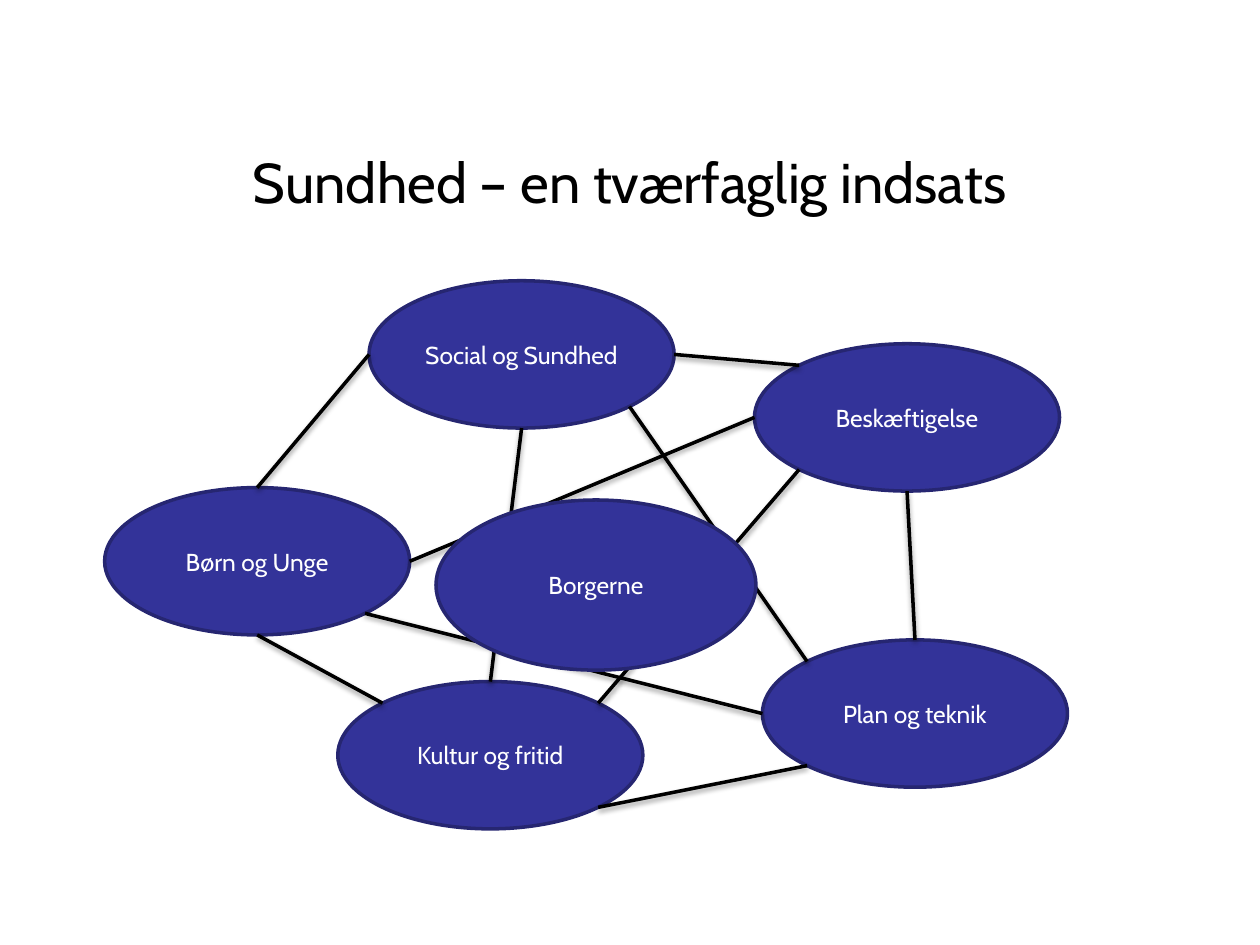
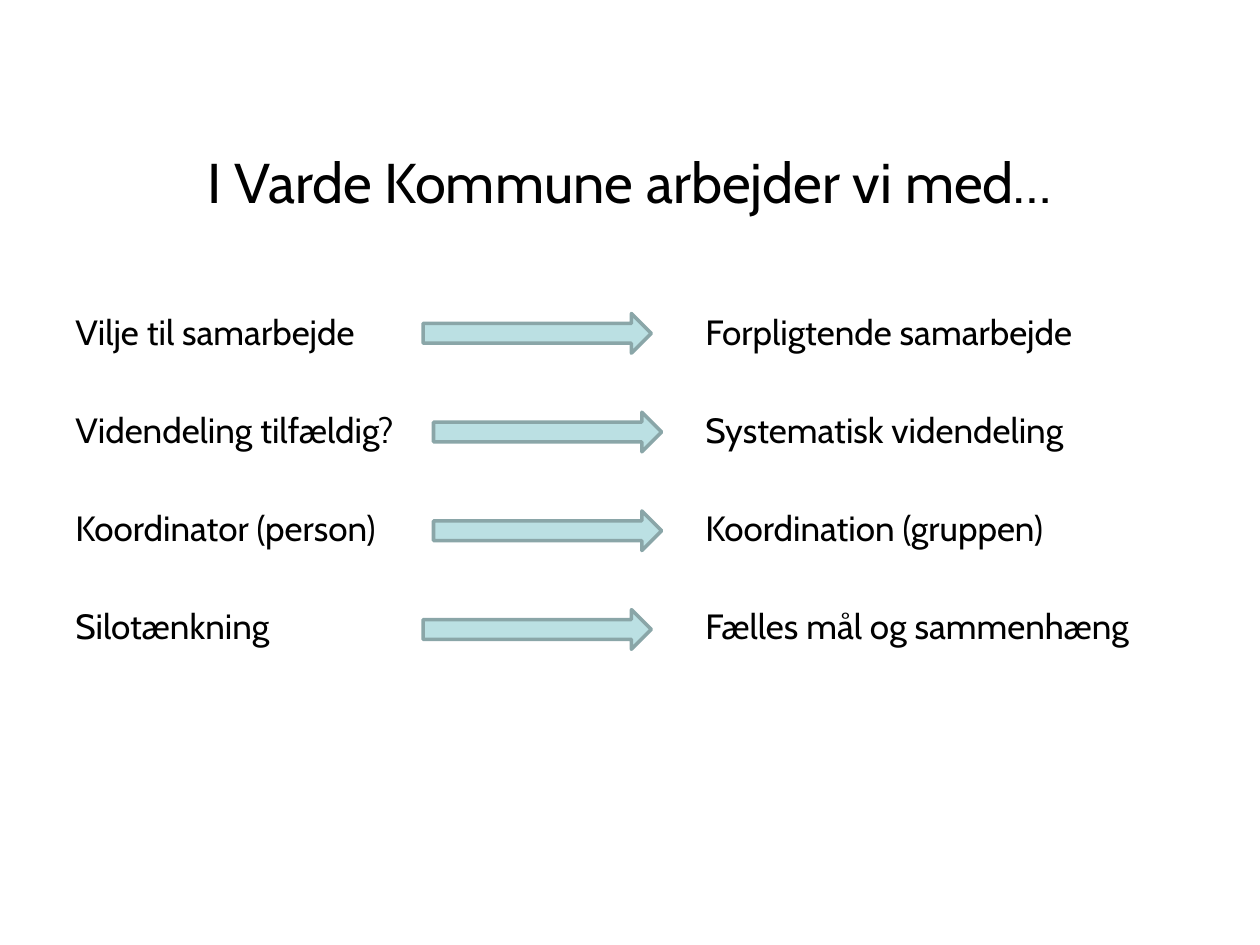
from math import cos, radians, sin

from lxml.etree import SubElement
from pptx import Presentation
from pptx.dml.color import RGBColor
from pptx.enum.shapes import MSO_CONNECTOR, MSO_SHAPE
from pptx.enum.text import MSO_ANCHOR, MSO_AUTO_SIZE, PP_ALIGN
from pptx.oxml.ns import qn
from pptx.util import Cm, Pt

FONT = "Cabin"
BLACK, WHITE = "000000", "FFFFFF"
NAVY, NAVY_EDGE = "333399", "262671"
AQUA, AQUA_EDGE = "BBE0E3", "8AA6A8"
LINE_WIDTH = Pt(2)

TITLE_BOX = (1.27, 2.64, 22.86, 2.01)
NETWORK_BOX = (2.11, 5.66, 19.41, 11.05)
SHIFTS_BOX = (1.52, 6.25, 22.36, 8)

# Department centres are offsets of the ellipse's corner within the network box.
DEPARTMENT_SIZE = (6.15, 2.97)
DEPARTMENTS = {
    "Børn og Unge": (0, 4.17),
    "Beskæftigelse": (13.1, 1.27),
    "Social og Sundhed": (5.33, 0),
    "Plan og teknik": (13.26, 7.24),
    "Kultur og fritid": (4.7, 8.08),
}
CITIZENS_OFFSET, CITIZENS_SIZE = (6.68, 4.42), (6.45, 3.43)

# Angles on the ellipse, clockwise from its right end
RIGHT, LOWER_RIGHT, BOTTOM, LOWER_LEFT = 0, 45, 90, 135
LEFT, UPPER_LEFT, TOP, UPPER_RIGHT = 180, 225, 270, 315
TIES = [
    ("Social og Sundhed", RIGHT, "Beskæftigelse", UPPER_LEFT),
    ("Social og Sundhed", LEFT, "Børn og Unge", TOP),
    ("Social og Sundhed", BOTTOM, "Kultur og fritid", TOP),
    ("Børn og Unge", BOTTOM, "Kultur og fritid", UPPER_LEFT),
    ("Beskæftigelse", BOTTOM, "Plan og teknik", TOP),
    ("Kultur og fritid", LOWER_RIGHT, "Plan og teknik", LOWER_LEFT),
    ("Kultur og fritid", UPPER_RIGHT, "Beskæftigelse", LOWER_LEFT),
    ("Børn og Unge", RIGHT, "Beskæftigelse", LEFT),
    ("Børn og Unge", LOWER_RIGHT, "Plan og teknik", LEFT),
    ("Social og Sundhed", LOWER_RIGHT, "Plan og teknik", UPPER_LEFT),
]

# From, to, and the left edge of the arrow within the box
SHIFTS = [
    ("Vilje til samarbejde", "Forpligtende samarbejde", 7.01),
    ("Videndeling tilfældig?", "Systematisk videndeling", 7.22),
    ("Koordinator (person)", "Koordination (gruppen)", 7.22),
    ("Silotænkning", "Fælles mål og sammenhæng", 7.01),
]
SHIFT_PITCH = 1.99
TARGET_COLUMN = 12.7


def rgb(hex_colour):
    return RGBColor.from_string(hex_colour)


def add_run(paragraph, text, size, colour):
    run = paragraph.add_run()
    run.text = text
    run.font.name = FONT
    run.font.size = Pt(size)
    run.font.color.rgb = rgb(colour)


def clear_insets(frame):
    frame.margin_left = frame.margin_right = 0
    frame.margin_top = frame.margin_bottom = 0


def add_titled_slide(deck, text):
    slide = deck.slides.add_slide(deck.slide_layouts[5])
    title = slide.shapes.title
    title.left, title.top, title.width, title.height = map(Cm, TITLE_BOX)
    frame = title.text_frame
    frame.auto_size = MSO_AUTO_SIZE.NONE
    frame.vertical_anchor = MSO_ANCHOR.MIDDLE
    paragraph = frame.paragraphs[0]
    paragraph.alignment = PP_ALIGN.CENTER
    add_run(paragraph, text, 32, BLACK)
    return slide


def add_outlined(shapes, kind, box, fill, edge):
    shape = shapes.add_shape(kind, *map(Cm, box))
    shape.shadow.inherit = False
    shape.fill.solid()
    shape.fill.fore_color.rgb = rgb(fill)
    shape.line.color.rgb = rgb(edge)
    shape.line.width = LINE_WIDTH
    return shape


def add_ellipse(shapes, text, box):
    ellipse = add_outlined(shapes, MSO_SHAPE.OVAL, box, NAVY, NAVY_EDGE)
    frame = ellipse.text_frame
    frame.word_wrap = True
    frame.vertical_anchor = MSO_ANCHOR.MIDDLE
    clear_insets(frame)
    paragraph = frame.paragraphs[0]
    paragraph.alignment = PP_ALIGN.CENTER
    add_run(paragraph, text, 14, WHITE)


def add_soft_shadow(connector):
    effects = SubElement(connector._element.spPr, qn("a:effectLst"))
    shadow = SubElement(effects, qn("a:outerShdw"), blurRad=str(Pt(3.1)),
                        dist=str(Pt(1.6)), dir="5400000", rotWithShape="0")
    colour = SubElement(shadow, qn("a:srgbClr"), val=BLACK)
    SubElement(colour, qn("a:alpha"), val="38000")


def rim_point(box, angle):
    """Return the point of the ellipse inside box at the given angle."""
    left, top, width, height = box
    turn = radians(angle)
    return (Cm(left + width / 2 * (1 + cos(turn))),
            Cm(top + height / 2 * (1 + sin(turn))))


def add_tie(shapes, start, end):
    tie = shapes.add_connector(MSO_CONNECTOR.STRAIGHT, *start, *end)
    tie.line.color.rgb = rgb(BLACK)
    tie.line.width = LINE_WIDTH
    add_soft_shadow(tie)


def add_network(slide, box):
    left, top = box[:2]
    shapes = slide.shapes.add_group_shape().shapes
    places = {name: (left + dx, top + dy, *DEPARTMENT_SIZE)
              for name, (dx, dy) in DEPARTMENTS.items()}
    for name, place in places.items():
        add_ellipse(shapes, name, place)
    for source, source_angle, target, target_angle in TIES:
        add_tie(shapes, rim_point(places[source], source_angle),
                rim_point(places[target], target_angle))
    dx, dy = CITIZENS_OFFSET
    add_ellipse(shapes, "Borgerne", (left + dx, top + dy, *CITIZENS_SIZE))


def add_shifts(slide, box):
    left, top = box[:2]
    frame = slide.shapes.add_textbox(*map(Cm, box)).text_frame
    frame.word_wrap = True
    clear_insets(frame)
    for row, (before, after, arrow_left) in enumerate(SHIFTS):
        paragraph = frame.add_paragraph() if row else frame.paragraphs[0]
        if row:
            paragraph.space_before = Pt(32)
        tabs = SubElement(paragraph._p.get_or_add_pPr(), qn("a:tabLst"))
        SubElement(tabs, qn("a:tab"), pos=str(Cm(TARGET_COLUMN)), algn="l")
        add_run(paragraph, f"{before}\t{after}", 20, BLACK)
        arrow_box = (left + arrow_left, top + 0.07 + row * SHIFT_PITCH, 4.6, 0.8)
        add_outlined(slide.shapes, MSO_SHAPE.RIGHT_ARROW, arrow_box, AQUA, AQUA_EDGE)


def main():
    deck = Presentation()
    deck.slide_width, deck.slide_height = Cm(25.4), Cm(19.05)
    add_network(add_titled_slide(deck, "Sundhed – en tværfaglig indsats"), NETWORK_BOX)
    add_shifts(add_titled_slide(deck, "I Varde Kommune arbejder vi med…"), SHIFTS_BOX)
    deck.save("out.pptx")


if __name__ == "__main__":
    main()
